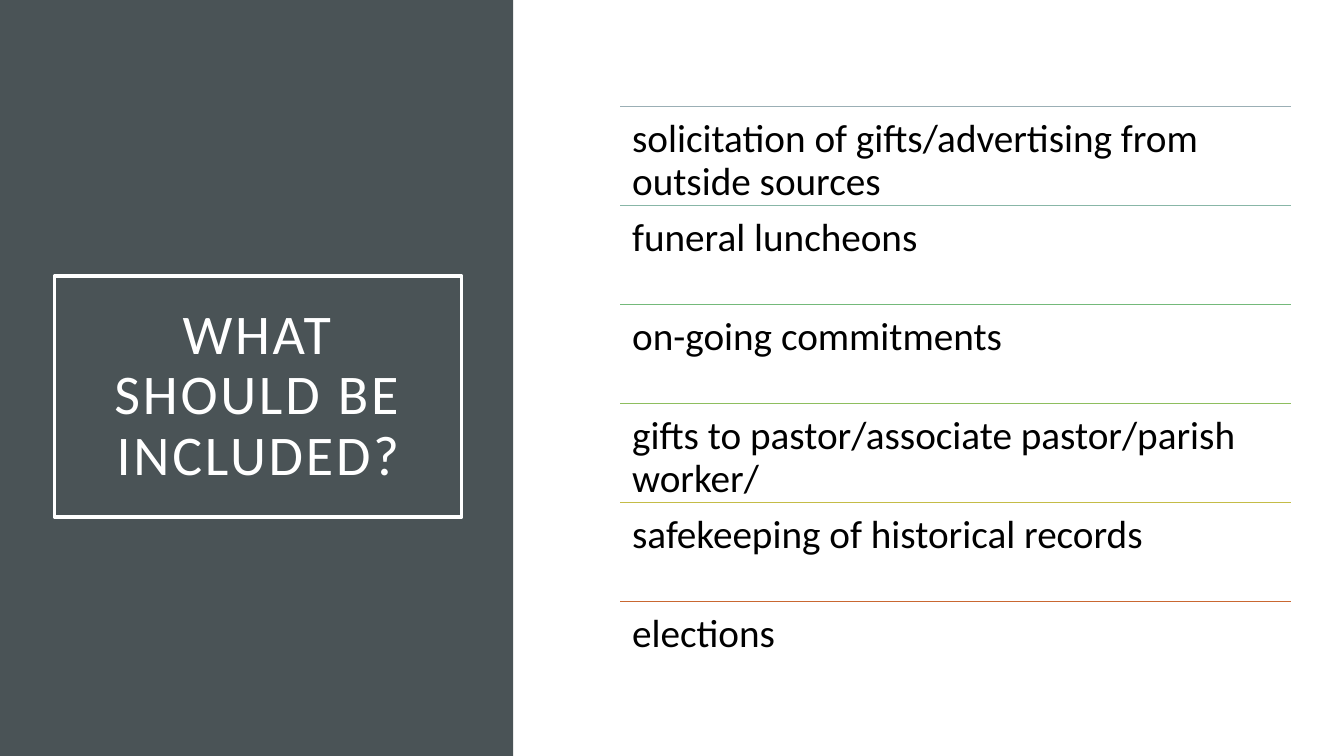
from lxml.etree import SubElement
from pptx import Presentation
from pptx.dml.color import RGBColor
from pptx.enum.shapes import MSO_CONNECTOR, MSO_SHAPE
from pptx.enum.text import MSO_ANCHOR, PP_ALIGN
from pptx.oxml.ns import qn
from pptx.util import Inches, Pt

TOPICS = [
    ("solicitation of gifts/advertising from outside sources", "9BAFB5"),
    ("funeral luncheons", "88B6A7"),
    ("on-going commitments", "74B97A"),
    ("gifts to pastor/associate pastor/parish worker/", "8EBE5E"),
    ("safekeeping of historical records", "C4BC47"),
    ("elections", "C96731"),
]


def rgb(value):
    return RGBColor.from_string(value)


def write(tf, text, size, color, inset):
    """Fill a text frame with one Calibri paragraph and return it."""
    tf.word_wrap = True
    tf.margin_left = tf.margin_right = Inches(inset)
    tf.margin_top = tf.margin_bottom = Inches(inset)
    p = tf.paragraphs[0]
    p.text = text
    p.line_spacing = 0.9
    p.font.name = "Calibri"
    p.font.size = Pt(size)
    p.font.color.rgb = rgb(color)
    return p


def add_title_panel(s, x, y, w, h):
    panel = s.shapes.add_shape(MSO_SHAPE.RECTANGLE, Inches(x), Inches(y), Inches(w), Inches(h))
    panel.shadow.inherit = False
    panel.fill.solid()
    panel.fill.fore_color.rgb = rgb("4A5356")
    panel.line.fill.background()

    title = s.shapes.add_shape(MSO_SHAPE.RECTANGLE, Inches(x + 0.54), Inches(y + 2.74),
                               Inches(w - 1.05), Inches(2.39))
    title.shadow.inherit = False
    title.fill.background()
    title.line.color.rgb = rgb("FFFFFF")
    title.line.width = Pt(2.5)
    tf = title.text_frame
    tf.vertical_anchor = MSO_ANCHOR.MIDDLE
    p = write(tf, "WHAT SHOULD BE INCLUDED?", 40, "FFFFFF", 0.2)
    p.alignment = PP_ALIGN.CENTER
    p.runs[0].font._element.set("spc", "200")


def add_topic_list(s, x, y, w, h):
    """Stack the topics in equal rows, each under a coloured rule."""
    row_h = h / len(TOPICS)
    for i, (topic, color) in enumerate(TOPICS):
        top = Inches(y + i * row_h)
        rule = s.shapes.add_connector(MSO_CONNECTOR.STRAIGHT, Inches(x), top, Inches(x + w), top)
        rule.line.color.rgb = rgb(color)
        rule.line.width = Pt(0.5)
        SubElement(rule._element.spPr, qn("a:effectLst"))
        box = s.shapes.add_textbox(Inches(x), top, Inches(w), Inches(row_h))
        write(box.text_frame, topic, 28, "000000", 0.12)


def main():
    prs = Presentation()
    prs.slide_width = Inches(13.33)
    prs.slide_height = Inches(7.5)
    s = prs.slides.add_slide(prs.slide_layouts[6])
    add_title_panel(s, 0, 0, 5.09, 7.5)
    add_topic_list(s, 6.15, 1.06, 6.65, 5.89)
    prs.save("out.pptx")


if __name__ == "__main__":
    main()
